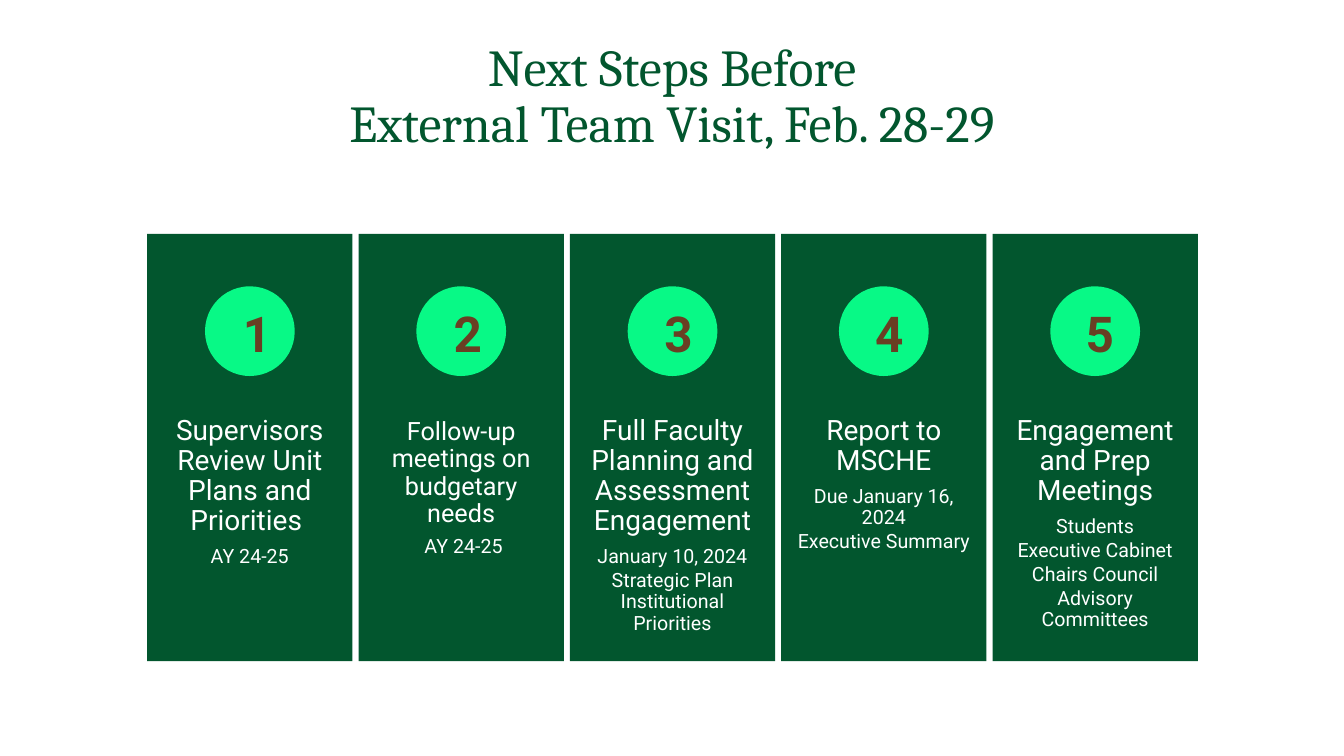
from pptx import Presentation
from pptx.dml.color import RGBColor
from pptx.enum.shapes import MSO_SHAPE as Kind
from pptx.enum.text import MSO_ANCHOR as Anchor, PP_ALIGN as Align
from pptx.util import Inches, Pt

TITLE = "Next Steps Before\vExternal Team Visit, Feb. 28-29"
STEPS = [
    ("Supervisors Review Unit Plans and Priorities ", 20, 0.11, ["AY 24-25"]),
    ("Follow-up meetings on budgetary needs", 18, 0.14, [" AY 24-25"]),
    ("Full Faculty Planning and Assessment Engagement", 20, 0.11,
     ["January 10, 2024", "Strategic Plan Institutional Priorities"]),
    ("Report to MSCHE", 20, 0.11, ["Due January 16, 2024", "Executive Summary"]),
    ("Engagement and Prep Meetings", 20, 0.11,
     ["Students", "Executive Cabinet", "Chairs Council", "Advisory Committees"]),
]
GREEN, MINT, BROWN, WHITE = "02562E", "08F986", "693F23", "FFFFFF"
WIDE, HIGH = 13.33, 7.5
LEFT, TOP, SPAN, TALL, GAP = 1.46, 2.32, 10.42, 4.24, 0.06
CARD = (SPAN - GAP * (len(STEPS) - 1)) / len(STEPS)
DOT = 0.89
NUM_LEFT, NUM_STEP = 2.31, 2.09

HEAD = {"name": "Cambria", "size": Pt(37)}
DIGIT = {"name": "Roboto", "size": Pt(35.3), "bold": True}
NOTE = {"name": "Roboto", "size": Pt(14)}


def color(code):
    return RGBColor.from_string(code)


def put(obj, vals):
    for key, val in vals.items():
        setattr(obj, key, val)


def block(kind, box, fill):
    shape = slide.shapes.add_shape(kind, *map(Inches, box))
    shape.shadow.inherit = False
    shape.fill.solid()
    shape.fill.fore_color.rgb = color(fill)
    shape.line.fill.background()


def label(box, rows, tint, para, frame):
    body = slide.shapes.add_textbox(*map(Inches, box)).text_frame
    put(body, {"word_wrap": True, **frame})
    for i, (text, font, after) in enumerate(rows):
        line = body.add_paragraph() if i else body.paragraphs[0]
        line.text = text
        put(line, {"alignment": Align.CENTER, "space_after": Pt(after), **para})
        for run in line.runs:
            put(run.font, font)
            run.font.color.rgb = color(tint)


deck = Presentation()
put(deck, {"slide_width": Inches(WIDE), "slide_height": Inches(HIGH)})
slide = deck.slides.add_slide(deck.slide_layouts[6])
tight = {"line_spacing": 0.9}

label((1.25, 0.3, 10.83, 1.27), [(TITLE, HEAD, 0)], GREEN, tight,
      {"vertical_anchor": Anchor.BOTTOM})

for i, (name, size, pad, notes) in enumerate(STEPS):
    x = LEFT + i * (CARD + GAP)
    block(Kind.RECTANGLE, (x, TOP, CARD, TALL), GREEN)
    block(Kind.OVAL, (x + (CARD - DOT) / 2, 2.84, DOT, DOT), MINT)
    rows = [(name, {**NOTE, "size": Pt(size)}, size * 0.35)]
    rows += [(note, NOTE, 14 * 0.15) for note in notes]
    sides = ("left", "top", "right", "bottom")
    label((x, TOP + TALL * 0.4, CARD, TALL * 0.4), rows, WHITE, tight,
          {f"margin_{side}": Inches(pad) for side in sides})
    label((NUM_LEFT + i * NUM_STEP, 2.96, 0.38, 0.7),
          [(str(i + 1), DIGIT, 6)], BROWN, {}, {})

deck.save("out.pptx")
